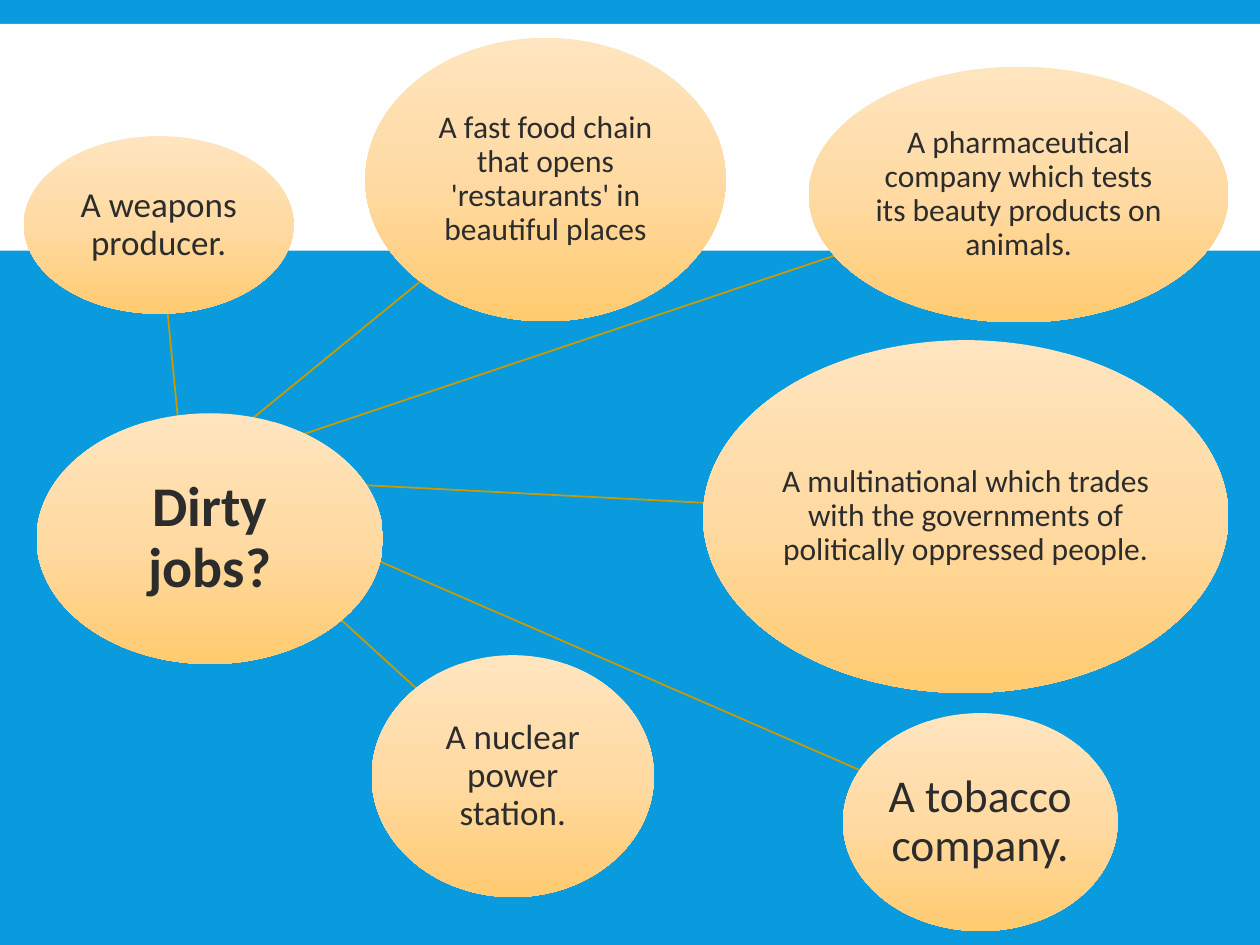
import copy
import pptx
import pptx.dml.color
import pptx.enum.shapes
import pptx.enum.text
import pptx.oxml.ns
import pptx.util

Inches = pptx.util.Inches
SHAPES = pptx.enum.shapes.MSO_SHAPE
STOPS = [(0, "FFE5BF"), (0.5, "FFDAA3"), (1, "FFCB70")]
HUB = ("Dirty jobs?", 0.29, 3.28, 2.75, 1.99, 32, 0.02)
JOBS = [
    ("A pharmaceutical company which tests its beauty products on animals.",
     6.42, 0.53, 3.33, 2.03, 18, 0.01),
    ("A multinational which trades with the governments of politically oppressed people.",
     5.58, 2.7, 4.17, 2.8, 18, 0.01),
    ("A weapons producer.", 0.19, 1.08, 2.14, 1.41, 20, 0.01),
    ("A fast food chain that opens 'restaurants' in beautiful places",
     2.9, 0.3, 2.86, 2.25, 18, 0.01),
    ("A nuclear power station.", 2.95, 5.2, 2.24, 1.92, 20, 0.01),
    ("A tobacco company.", 6.69, 5.66, 2.18, 1.73, 26, 0.02),
]
SPOKES = [
    (1.92, 3.98, 6.82, 6.11),
    (1.92, 4.2, 3.3, 5.46),
    (1.92, 3.39, 3.34, 2.23),
    (1.41, 3.3, 1.33, 2.48),
    (1.92, 3.8, 5.58, 3.99),
    (1.92, 3.61, 6.62, 2.03),
]


def paint(color, code):
    color.rgb = pptx.dml.color.RGBColor.from_string(code)


def add_shape(slide, kind, *box):
    shape = slide.shapes.add_shape(kind, *map(Inches, box))
    shape.shadow.inherit = False
    shape.line.fill.background()
    return shape


def add_band(slide):
    band = add_shape(slide, SHAPES.RECTANGLE, 0, 0.19, 10, 1.8)
    band.fill.solid()
    paint(band.fill.fore_color, "FFFFFF")


def add_spoke(slide, *ends):
    kind = pptx.enum.shapes.MSO_CONNECTOR.STRAIGHT
    spoke = slide.shapes.add_connector(kind, *map(Inches, ends))
    spoke.line.width = pptx.util.Pt(1)
    paint(spoke.line.color, "CC9A00")
    tag = pptx.oxml.ns.qn("a:effectLst")
    spoke._element.spPr.append(pptx.oxml.parse_xml(
        f'<a:effectLst {pptx.oxml.ns.nsdecls("a")}/>')
        if spoke._element.spPr.find(tag) is None else spoke._element.spPr.find(tag))


def shade(shape):
    shape.fill.gradient()
    shape.fill.gradient_angle = 270
    stops = next(shape._element.spPr.iter(pptx.oxml.ns.qn("a:gsLst")))
    stops.append(copy.deepcopy(stops[0]))
    for stop, (place, code) in zip(shape.fill.gradient_stops, STOPS):
        stop.position = place
        paint(stop.color, code)


def add_bubble(slide, text, left, top, width, height, size, inset, bold=False):
    bubble = add_shape(slide, SHAPES.OVAL, left, top, width, height)
    shade(bubble)
    frame = bubble.text_frame
    frame.word_wrap = True
    frame.vertical_anchor = pptx.enum.text.MSO_ANCHOR.MIDDLE
    frame.margin_left = frame.margin_right = Inches(inset)
    frame.margin_top = frame.margin_bottom = Inches(inset)
    para = frame.paragraphs[0]
    para.alignment = pptx.enum.text.PP_ALIGN.CENTER
    para.line_spacing = 0.9
    run = para.add_run()
    run.text = text
    run.font.name = "Calibri"
    run.font.size = pptx.util.Pt(size)
    run.font.bold = bold
    paint(run.font.color, "2C2C2C")


def main():
    deck = pptx.Presentation()
    deck.slide_width, deck.slide_height = Inches(10), Inches(7.5)
    slide = deck.slides.add_slide(deck.slide_layouts[6])
    slide.background.fill.solid()
    paint(slide.background.fill.fore_color, "099BDD")
    add_band(slide)
    for ends in SPOKES:
        add_spoke(slide, *ends)
    add_bubble(slide, *HUB, bold=True)
    for job in JOBS:
        add_bubble(slide, *job)
    deck.save("out.pptx")


if __name__ == "__main__":
    main()
